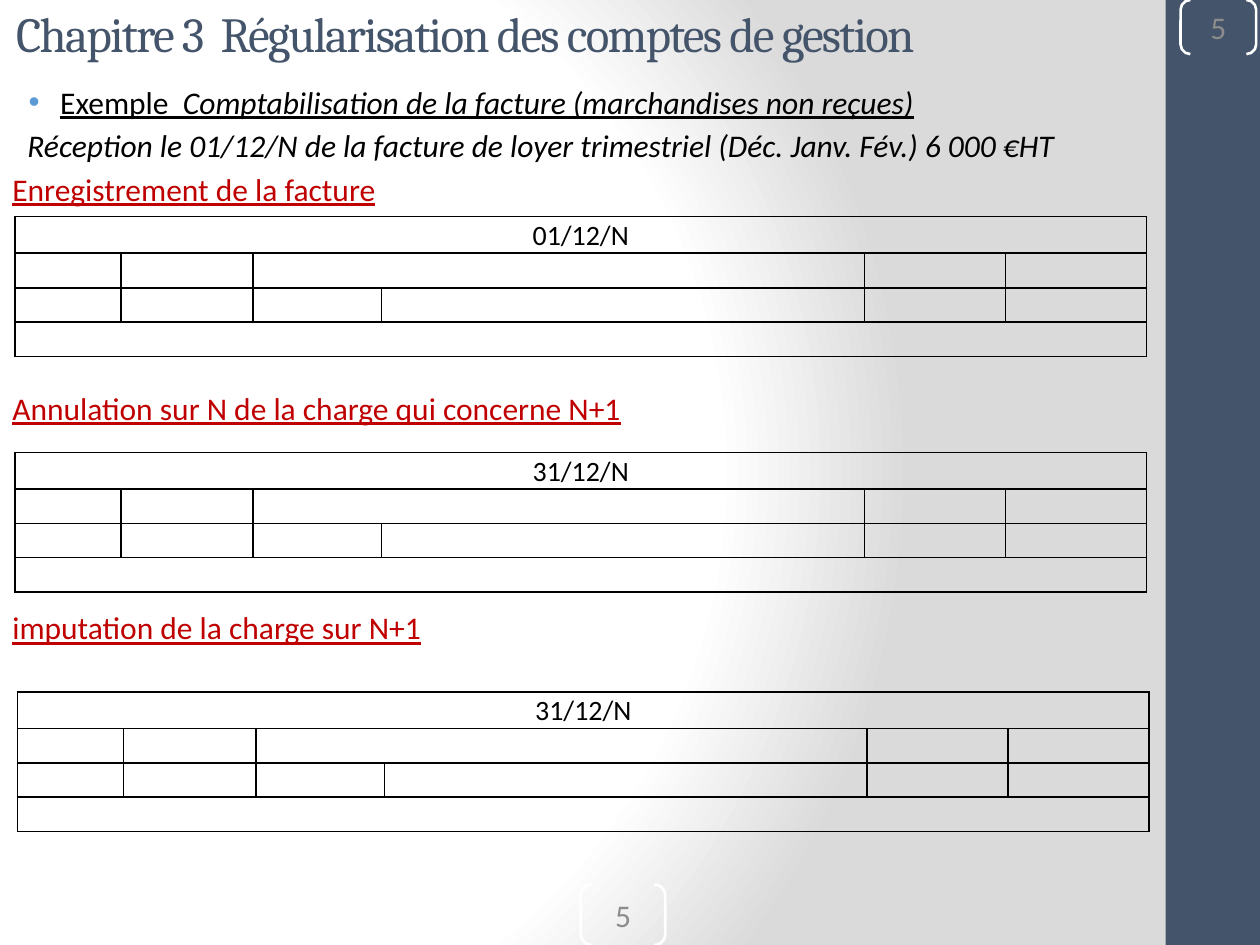
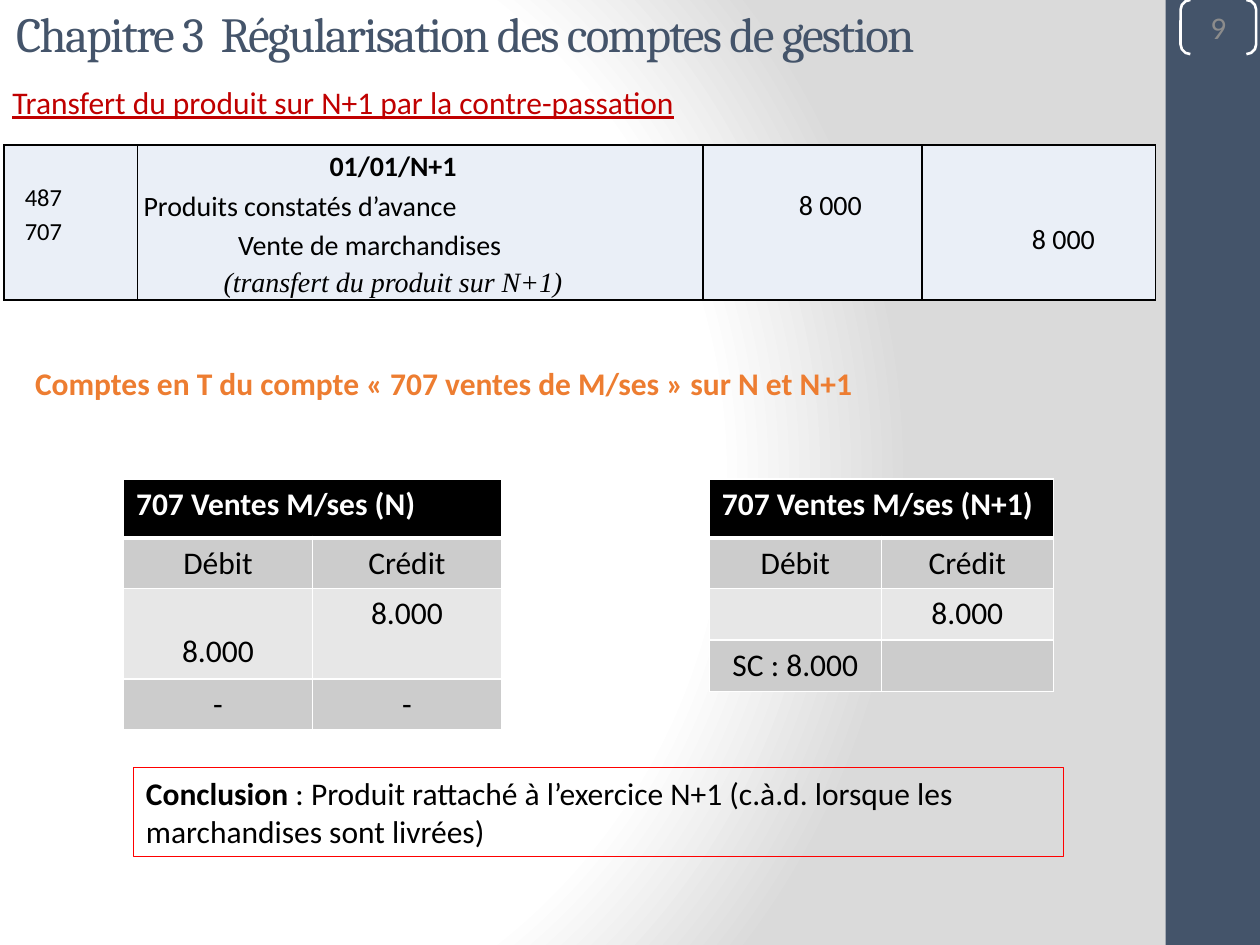
"""Build two slides on the adjustment of income and expense accounts."""
from pptx import Presentation
from pptx.dml.color import RGBColor
from pptx.enum.shapes import MSO_SHAPE
from pptx.enum.text import MSO_ANCHOR, PP_ALIGN
from pptx.oxml import parse_xml
from pptx.oxml.ns import nsdecls
from pptx.util import Inches, Pt

RECT, PAIR = MSO_SHAPE.RECTANGLE, MSO_SHAPE.DOUBLE_BRACKET
LEFT, MID, RIGHT = PP_ALIGN.LEFT, PP_ALIGN.CENTER, PP_ALIGN.RIGHT
CORE = MSO_ANCHOR.MIDDLE
INK = {
    "black": "000000", "white": "FFFFFF", "slate": "44546A", "gray": "8C8C8C",
    "red": "C00000", "edge": "FF0000", "orange": "ED7D31", "dot": "5B9BD5",
    "pale": "EAEFF7", "mid": "CCCCCC", "light": "E7E7E7", "fog": "DADADA",
}
NS = nsdecls("a")
W, H = Inches(10), Inches(7.5)
U = W // 100
GAP = 3.17
LINE = 25.14


def write(par, text, size=18, ink="black", face="Calibri", side=LEFT, tail="", **marks):
    """Set a paragraph's text, plus an optional second run, and style it."""
    par.text = text
    par.alignment = side
    if tail:
        par.add_run().text = tail
    for run in par.runs:
        run.font.size = Pt(size)
        run.font.name = face
        run.font.color.rgb = RGBColor.from_string(INK[ink])
        for mark, on in marks.items():
            setattr(run.font, mark, on)


def grid(page, left, top, cols, rows, ink, side, rim):
    """Add a plain table with ruled cells; lengths are in grid units."""
    box = [int(v * U) for v in (left, top, sum(cols), sum(rows))]
    table = page.shapes.add_table(len(rows), len(cols), *box).table
    table.first_row = table.horz_banding = False
    for col, wide in zip(table.columns, cols):
        col.width = int(wide * U)
    for row, high in zip(table.rows, rows):
        row.height = int(high * U)
    for cell in table.iter_cells():
        cell.margin_left = cell.margin_right = int(side * U)
        cell.margin_top = cell.margin_bottom = int(rim * U)
        cell.text_frame.paragraphs[0]._p.get_or_add_endParaRPr().set("sz", "1200")
        rules = cell._tc.get_or_add_tcPr()
        for edge in "LRTB":
            rules.append(parse_xml(
                f'<a:ln{edge} {NS} w="12700"><a:solidFill><a:srgbClr val="{INK[ink]}"/>'
                f'</a:solidFill></a:ln{edge}>'))
        cell.fill.background()
    return table


deck = Presentation()
deck.slide_width, deck.slide_height = W, H
pages, bodies = [], []
TOP = (93.7, 0, 6, 4.3)
FOOT = (46.1, 70.2, 6.7, 4.8)

for num, spots in (("5", (TOP, FOOT)), ("9", (TOP,))):
    page = deck.slides.add_slide(deck.slide_layouts[6])
    fill = page.background.fill
    fill.solid()
    solid = page.element.find(".//{*}bgPr/{*}solidFill")
    stops = "".join(
        f'<a:gs pos="{pos}000"><a:srgbClr val="{INK[ink]}"/></a:gs>'
        for pos, ink in ((0, "white"), (75, "white"), (100, "fog")))
    solid.getparent().replace(solid, parse_xml(
        f'<a:gradFill {NS} rotWithShape="1"><a:gsLst>{stops}</a:gsLst><a:path path="circle">'
        '<a:fillToRect l="20000" t="50000" r="100000" b="50000"/></a:path></a:gradFill>'))

    band = page.shapes.add_shape(RECT, int(W * 0.925), 0, int(W * 0.075), H)
    band.shadow.inherit = False
    band.fill.solid()
    band.fill.fore_color.rgb = RGBColor.from_string(INK["slate"])
    band.line.fill.background()

    for spot in spots:
        mark = page.shapes.add_shape(PAIR, *[int(v * U) for v in spot])
        mark.adjustments[0] = 0.18
        mark.shadow.inherit = False
        mark.fill.background()
        mark.line.color.rgb = RGBColor.from_string(INK["white"])
        mark.line.width = Pt(1.5)
        frame = mark.text_frame
        frame.margin_left = frame.margin_right = frame.margin_top = frame.margin_bottom = 0
        frame.vertical_anchor = CORE
        write(frame.paragraphs[0], num, ink="gray", side=MID)

    for spot in ((0.3, -0.2, 83.3, 6.2), (0, 6.1, 92, 65)):
        frame = page.shapes.add_textbox(*[int(v * U) for v in spot]).text_frame
        frame.word_wrap = True
        if spot[1] < 0:
            title = frame.paragraphs[0]
            write(title, "Chapitre 3  Régularisation des comptes de gestion",
                  28, "slate", "Cambria")
            title.runs[0]._r.get_or_add_rPr().set("spc", "-100")
    pages.append(page)
    bodies.append(frame)

page, body = pages[0], bodies[0]
lead = body.paragraphs[0]
props = lead._p.get_or_add_pPr()
props.set("marL", str(int(3.8 * U)))
props.set("indent", str(int(-2.5 * U)))
for part in (f'<a:buClr {NS}><a:srgbClr val="{INK["dot"]}"/></a:buClr>',
             f'<a:buFont {NS} typeface="Arial"/>', f'<a:buChar {NS} char="•"/>'):
    props.append(parse_xml(part))
write(lead, "Exemple  ", tail="Comptabilisation de la facture (marchandises non reçues)",
      underline=True)
lead.runs[1].font.italic = True
note = body.add_paragraph()
note.space_before = Pt(GAP)
note._p.get_or_add_pPr().set("marL", str(int(1.2 * U)))
write(note, "Réception le 01/12/N de la facture de loyer trimestriel (Déc. Janv. Fév.) 6 000 €HT",
      italic=True)
for skip, text in ((0, "Enregistrement de la facture"),
                   (4, "Annulation sur N de la charge qui concerne N+1"),
                   (4, "imputation de la charge sur N+1")):
    par = body.add_paragraph()
    par.space_before = Pt(GAP + skip * LINE)
    write(par, text, ink="red", underline=True)

for left, top, date in ((1.2, 17.2, "01/12/N"), (1.2, 35.9, "31/12/N"), (1.4, 54.9, "31/12/N")):
    log = grid(page, left, top, (8.4, 10.5, 10.2, 38.3, 11.2, 11.2),
               (2.9, 2.75, 2.7, 2.75), "black", 0.7, 0)
    for row, start, end in ((0, 0, 5), (1, 2, 3), (3, 0, 5)):
        log.cell(row, start).merge(log.cell(row, end))
    par = log.cell(0, 0).text_frame.paragraphs[0]
    par.line_spacing = 1.07
    write(par, date, 16, side=MID)

page, body = pages[1], bodies[1]
write(body.paragraphs[0], "Transfert du produit sur N+1 par la contre-passation",
      ink="red", underline=True)

log = grid(page, 0.3, 11.5, (10.6, 44.9, 17.4, 18.5), (12.3,), "black", 0.5, 0)
entry = (
    (2.7, 14, MID, ("487", "707")),
    (0, 16, LEFT, ("01/01/N+1", "Produits constatés d’avance", "Vente de marchandises",
                   "(transfert du produit sur N+1)")),
    (3.1, 16, RIGHT, ("8 000",)),
    (5.8, 16, RIGHT, ("8 000",)),
)
for cell, (drop, size, side, lines) in zip(log.iter_cells(), entry):
    cell.fill.solid()
    cell.fill.fore_color.rgb = RGBColor.from_string(INK["pale"])
    cell.margin_top = int(drop * U)
    cell.margin_right = int(4.8 * U)
    frame = cell.text_frame
    frame.text = "\n".join(lines)
    for par, line in zip(frame.paragraphs, lines):
        par.line_spacing = 1.15
        write(par, line, size, side=side)
date, _, sale, why = log.cell(0, 1).text_frame.paragraphs
date.alignment = why.alignment = MID
date.runs[0].font.bold = True
sale._p.get_or_add_pPr().set("marL", str(int(7.5 * U)))
why.runs[0].font.name = "Times New Roman"
why.runs[0].font.italic = True

for left, wide, rows, head, cells in (
    (9.8, 15, (4.7, 4, 7.2, 4), "707 Ventes M/ses (N)",
     ("Débit", "Crédit", "8.000", "8.000", "-", "-")),
    (56.3, 13.65, (4.7, 4, 4.1, 4.1), "707 Ventes M/ses (N+1)",
     ("Débit", "Crédit", "", "8.000", "SC : 8.000", "")),
):
    sheet = grid(page, left, 38, (wide, wide), rows, "white", 1, 0.5)
    sheet.cell(0, 0).merge(sheet.cell(0, 1))
    for pos, cell in enumerate(sheet.iter_cells()):
        row = pos // 2
        cell.fill.solid()
        cell.fill.fore_color.rgb = RGBColor.from_string(
            INK[("black", "mid", "light", "mid")[row]])
        if row == 0:
            cell._tc.tcPr.find("{*}lnB").set("w", str(Pt(3)))
        elif row == 1:
            cell._tc.tcPr.find("{*}lnT").set("w", str(Pt(3)))
        if row and cells[pos - 2]:
            write(cell.text_frame.paragraphs[0], cells[pos - 2], side=MID)
    write(sheet.cell(0, 0).text_frame.paragraphs[0], head, ink="white", bold=True)
    if rows[2] > 5:
        sheet.cell(2, 0).margin_top = int(3.5 * U)

frame = page.shapes.add_textbox(*[int(v * U) for v in (0.6, 28.4, 90.6, 4)]).text_frame
frame.word_wrap = True
par = frame.paragraphs[0]
par._p.get_or_add_pPr().set("marL", str(int(1.2 * U)))
write(par, "Comptes en T du compte « 707 ventes de M/ses » sur N et N+1", ink="orange", bold=True)

box = page.shapes.add_shape(RECT, *[int(v * U) for v in (10.6, 60.9, 73.8, 7.1)])
box.shadow.inherit = False
box.fill.background()
box.line.color.rgb = RGBColor.from_string(INK["edge"])
box.line.width = Pt(0.75)
box.text_frame.word_wrap = True
par = box.text_frame.paragraphs[0]
write(par, "Conclusion", tail=" : Produit rattaché à l’exercice N+1 "
      "(c.à.d. lorsque les marchandises sont livrées)")
par.runs[0].font.bold = True

deck.save("out.pptx")
